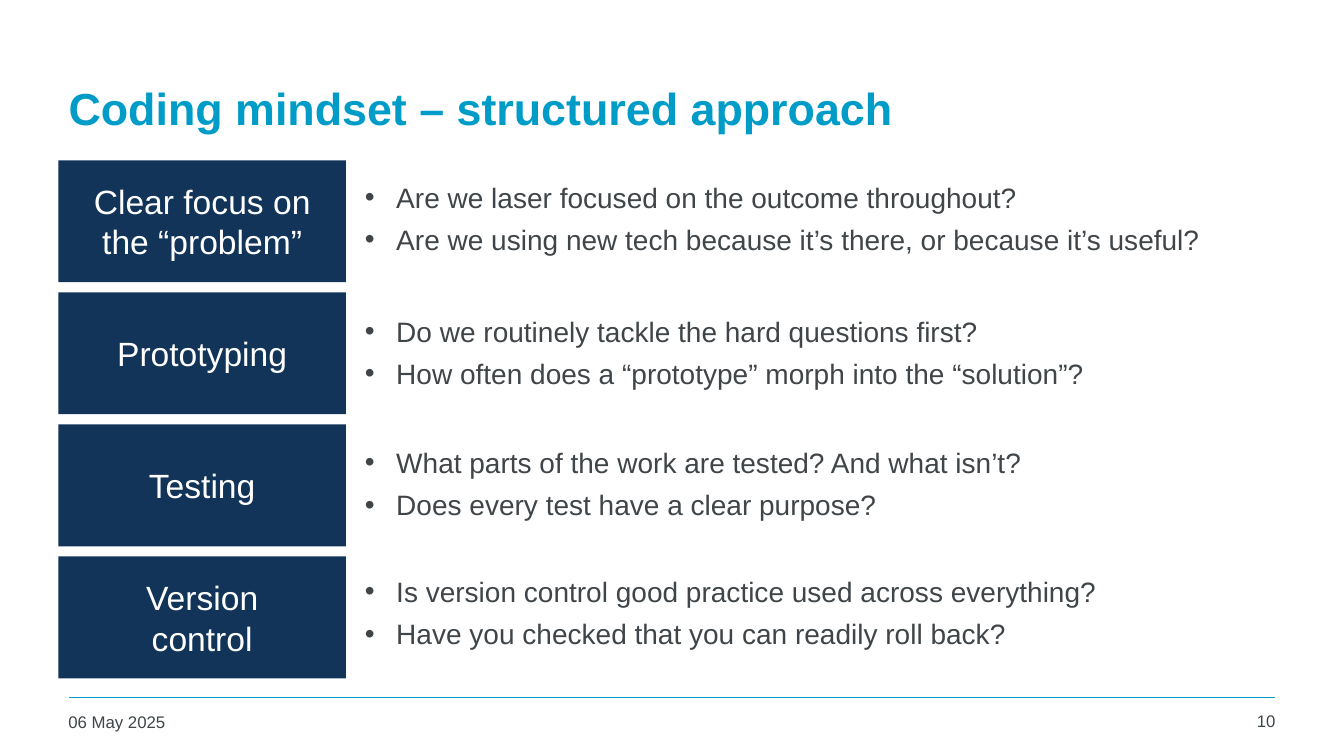
from lxml.etree import SubElement
from pptx import Presentation
from pptx.dml.color import RGBColor
from pptx.enum.shapes import MSO_CONNECTOR, MSO_SHAPE
from pptx.enum.text import MSO_ANCHOR, MSO_AUTO_SIZE, PP_ALIGN
from pptx.oxml.ns import qn
from pptx.util import Inches, Pt

COLORS = {"accent": "009CC8", "navy": "113458", "text": "3F4548", "white": "FFFFFF"}
FONT = "Arial"

TOPICS = [
    ("Clear focus on the “problem”", 0.15, [
        "Are we laser focused on the outcome throughout?",
        "Are we using new tech because it’s there, or because it’s useful?"]),
    ("Prototyping", 0.17, [
        "Do we routinely tackle the hard questions first?",
        "How often does a “prototype” morph into the “solution”?"]),
    ("Testing", 0.16, [
        "What parts of the work are tested? And what isn’t?",
        "Does every test have a clear purpose?"]),
    ("Version\ncontrol", 0.13, [
        "Is version control good practice used across everything?",
        "Have you checked that you can readily roll back?"]),
]


def rgb(name):
    return RGBColor.from_string(COLORS[name])


def add_run(p, text, size, color, bold=False):
    for i, line in enumerate(text.split("\n")):
        if i:
            p.add_line_break()
        r = p.add_run()
        r.text = line
        r.font.name = FONT
        r.font.size = Pt(size)
        r.font.bold = bold
        r.font.color.rgb = rgb(color)


def place(sp, left, top, width, height):
    sp.left, sp.top = Inches(left), Inches(top)
    sp.width, sp.height = Inches(width), Inches(height)


def add_bullet(p):
    pPr = p._p.get_or_add_pPr()
    pPr.set("marL", str(Inches(0.31)))
    pPr.set("indent", str(Inches(-0.31)))
    SubElement(pPr, qn("a:buFont")).set("typeface", FONT)
    SubElement(pPr, qn("a:buChar")).set("char", "•")


def build_title(sp, left, top, width, height):
    place(sp, left, top, width, height)
    tf = sp.text_frame
    tf.auto_size = MSO_AUTO_SIZE.NONE
    tf.vertical_anchor = MSO_ANCHOR.MIDDLE
    p = tf.paragraphs[0]
    p.alignment = PP_ALIGN.LEFT
    add_run(p, "Coding mindset – structured approach", 32, "accent", True)


def build_label(s, text, left, top, width, height):
    sp = s.shapes.add_shape(MSO_SHAPE.RECTANGLE, Inches(left), Inches(top),
                            Inches(width), Inches(height))
    sp.shadow.inherit = False
    sp.fill.solid()
    sp.fill.fore_color.rgb = rgb("navy")
    sp.line.fill.background()
    tf = sp.text_frame
    tf.word_wrap = True
    tf.vertical_anchor = MSO_ANCHOR.MIDDLE
    p = tf.paragraphs[0]
    p.alignment = PP_ALIGN.CENTER
    add_run(p, text, 24, "white")


def build_questions(sp, questions, left, top, width, height):
    place(sp, left, top, width, height)
    tf = sp.text_frame
    tf.word_wrap = True
    tf.auto_size = MSO_AUTO_SIZE.SHAPE_TO_FIT_TEXT
    tf.vertical_anchor = MSO_ANCHOR.TOP
    for i, question in enumerate(questions):
        p = tf.add_paragraph() if i else tf.paragraphs[0]
        add_bullet(p)
        p.alignment = PP_ALIGN.LEFT
        p.space_before = Pt(0)
        p.space_after = Pt(6)
        add_run(p, question, 20, "text")


def build_topics(s, bodies, left, top, width, row_height, gap):
    label_width = 2.85
    text_left = left + label_width + 0.09
    for i, (label, offset, questions) in enumerate(TOPICS):
        row_top = top + i * (row_height + gap)
        build_label(s, label, left, row_top, label_width, row_height)
        build_questions(bodies[i], questions, text_left, row_top + offset,
                        left + width - text_left, 0.86)


def build_footer(s, left, top, width):
    rule = s.shapes.add_connector(MSO_CONNECTOR.STRAIGHT, Inches(left + 0.1), Inches(top),
                                  Inches(left + width - 0.1), Inches(top))
    rule.line.color.rgb = rgb("accent")
    rule.line.width = Pt(1)
    SubElement(rule._element.spPr, qn("a:effectLst"))
    for text, x, y, w, align in [
        ("06 May 2025", left, top + 0.09, 2.94, PP_ALIGN.LEFT),
        ("10", left + width - 0.94, top + 0.08, 0.94, PP_ALIGN.RIGHT),
    ]:
        sp = s.shapes.add_textbox(Inches(x), Inches(y), Inches(w), Inches(0.36))
        tf = sp.text_frame
        tf.word_wrap = True
        p = tf.paragraphs[0]
        p.alignment = align
        add_run(p, text, 12, "text")


def main():
    prs = Presentation()
    prs.slide_width, prs.slide_height = Inches(13.33), Inches(7.5)
    s = prs.slides.add_slide(prs.slide_layouts.get_by_name("Comparison"))
    title, *bodies = s.placeholders
    build_title(title, 0.58, 0.44, 12.09, 1.25)
    build_topics(s, bodies, 0.58, 1.59, 12.18, 1.21, 0.1)
    build_footer(s, 0.58, 6.92, 12.17)
    prs.save("out.pptx")


if __name__ == "__main__":
    main()
